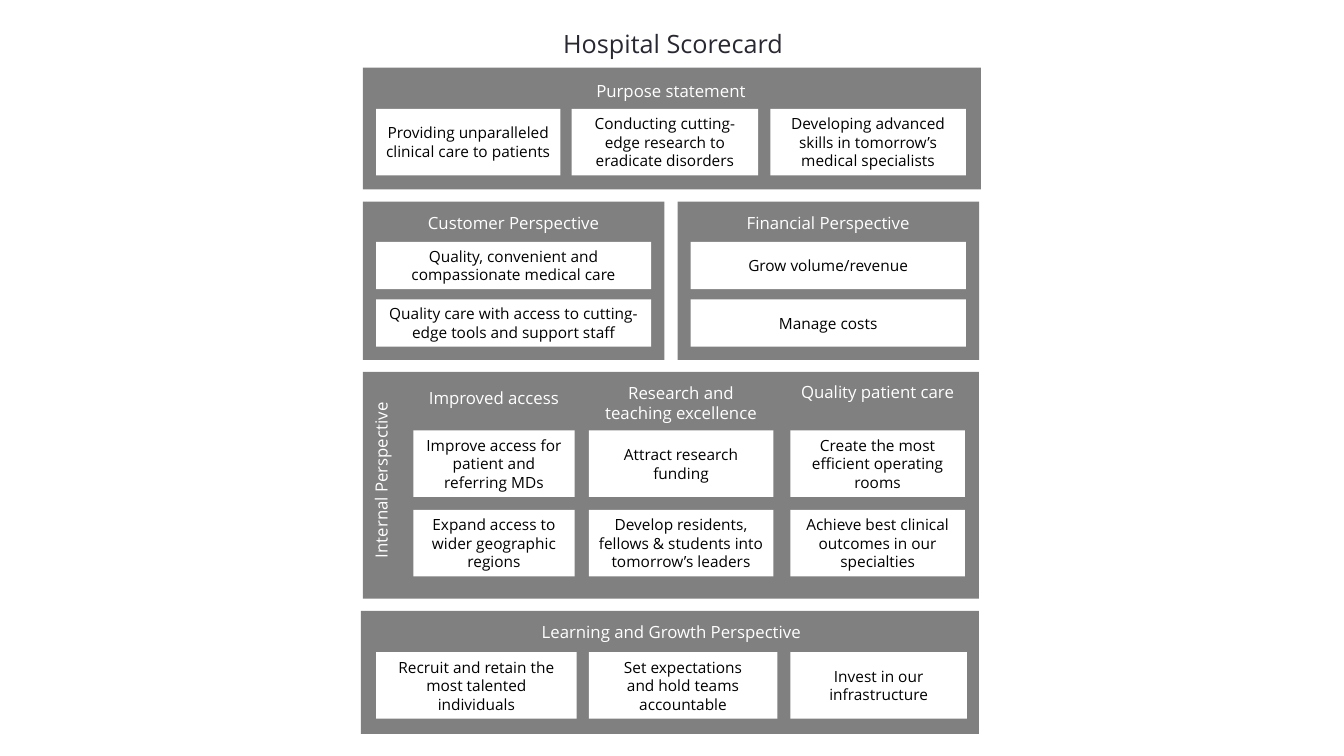
import pptx
import pptx.dml.color
import pptx.enum.shapes
import pptx.enum.text
import pptx.util

EMU_PER_PX = 9144  # 100 px to the inch


def px(length):
    return pptx.util.Emu(length * EMU_PER_PX)


def color(hex_string):
    return pptx.dml.color.RGBColor.from_string(hex_string)


class Scorecard:
    FONT = "Open Sans"
    PANEL = "808080"
    WHITE = "FFFFFF"
    BLACK = "000000"
    TITLE = "282832"

    def __init__(self, slide):
        self.slide = slide

    def rectangle(self, left, top, width, height, fill):
        shape = self.slide.shapes.add_shape(
            pptx.enum.shapes.MSO_SHAPE.RECTANGLE,
            px(left), px(top), px(width), px(height))
        shape.shadow.inherit = False
        shape.fill.solid()
        shape.fill.fore_color.rgb = color(fill)
        shape.line.fill.background()
        return shape

    def set_text(self, shape, text, size, text_color, anchor):
        frame = shape.text_frame
        frame.word_wrap = True
        frame.vertical_anchor = anchor
        frame.text = text
        for paragraph in frame.paragraphs:
            paragraph.alignment = pptx.enum.text.PP_ALIGN.CENTER
            for run in paragraph.runs:
                run.font.name = self.FONT
                run.font.size = pptx.util.Pt(size)
                run.font.color.rgb = color(text_color)

    def panel(self, left, top, width, height):
        self.rectangle(left, top, width, height, self.PANEL)

    def objective(self, left, top, width, height, text):
        shape = self.rectangle(left, top, width, height, self.WHITE)
        self.set_text(shape, text, 11, self.BLACK,
                      pptx.enum.text.MSO_ANCHOR.MIDDLE)

    def heading(self, left, top, width, height, text,
                size=12, text_color=WHITE, vertical=False):
        shape = self.slide.shapes.add_textbox(
            px(left), px(top), px(width), px(height))
        self.set_text(shape, text, size, text_color,
                      pptx.enum.text.MSO_ANCHOR.TOP)
        if vertical:
            shape.element.txBody.bodyPr.set("vert", "vert270")

    def objective_row(self, top, columns, texts):
        """Place one row of boxes; each column is (left, width)."""
        for (left, width), text in zip(columns, texts):
            self.objective(left, top, width, 66, text)


def main():
    presentation = pptx.Presentation()
    presentation.slide_width = px(1333)
    presentation.slide_height = px(750)
    slide = presentation.slides.add_slide(presentation.slide_layouts[6])
    card = Scorecard(slide)

    card.heading(360, 23, 615, 40, "Hospital Scorecard", 18, card.TITLE)

    card.panel(360, 67, 613, 121)
    card.heading(360, 75, 611, 30, "Purpose statement")
    card.objective_row(108, [(373, 183), (567, 185), (764, 194)], [
        "Providing unparalleled clinical care to patients",
        "Conducting cutting-edge research to eradicate disorders",
        "Developing advanced skills in tomorrow’s medical specialists",
    ])

    perspectives = [
        (360, "Customer Perspective", [
            "Quality, convenient and compassionate medical care",
            "Quality care with access to cutting-edge tools and support staff",
        ]),
        (672, "Financial Perspective", ["Grow volume/revenue", "Manage costs"]),
    ]
    for left, title, objectives in perspectives:
        card.panel(left, 200, 299, 157)
        card.heading(left + 13, 206, 273, 30, title)
        for row, text in enumerate(objectives):
            card.objective(left + 13, 240 + 57 * row, 273, 47, text)

    card.panel(360, 369, 611, 225)
    card.heading(363, 369, 40, 215, "Internal Perspective", vertical=True)
    internal_columns = [(410, 160), (584, 183), (784, 173)]
    internal_headings = [
        (380, "Improved access"),
        (375, "Research and teaching excellence"),
        (374, "Quality patient care"),
    ]
    for (left, width), (top, title) in zip(internal_columns, internal_headings):
        card.heading(left, top, width, 50, title)
    card.objective_row(427, internal_columns, [
        "Improve access for patient and referring MDs",
        "Attract research funding",
        "Create the most efficient operating rooms",
    ])
    card.objective_row(506, internal_columns, [
        "Expand access to wider geographic regions",
        "Develop residents, fellows & students into tomorrow’s leaders",
        "Achieve best clinical outcomes in our specialties",
    ])

    card.panel(358, 606, 613, 122)
    card.heading(373, 612, 586, 30, "Learning and Growth Perspective")
    card.objective_row(647, [(373, 199), (584, 187), (784, 175)], [
        "Recruit and retain the most talented individuals",
        "Set expectations\vand hold teams accountable",
        "Invest in our infrastructure",
    ])

    presentation.save("out.pptx")


if __name__ == "__main__":
    main()
